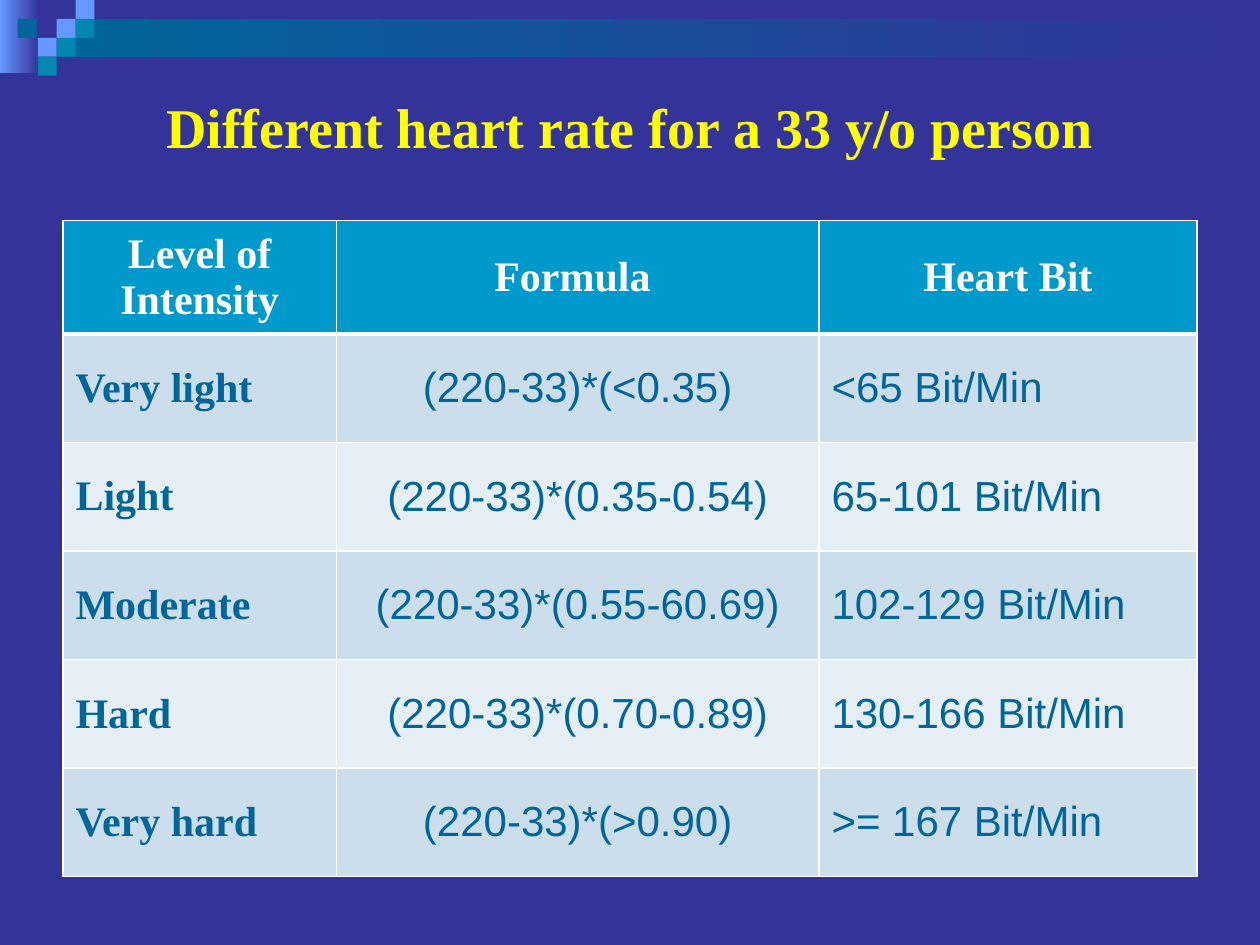
from lxml.etree import SubElement
from pptx import Presentation
from pptx.dml.color import RGBColor
from pptx.enum.shapes import MSO_SHAPE
from pptx.enum.text import MSO_ANCHOR, PP_ALIGN
from pptx.oxml.ns import qn
from pptx.util import Inches, Pt

NAVY = RGBColor(0x33, 0x33, 0x99)
SKY = RGBColor(0x66, 0x99, 0xFF)
DEEP_BLUE = RGBColor(0x00, 0x66, 0x99)
TEAL = RGBColor(0x03, 0x86, 0xAF)
YELLOW = RGBColor(0xFF, 0xFF, 0x00)
WHITE = RGBColor(0xFF, 0xFF, 0xFF)
HEADER_BLUE = RGBColor(0x00, 0x99, 0xCC)
ROW_FILLS = (RGBColor(0xCC, 0xDE, 0xEC), RGBColor(0xE7, 0xEF, 0xF6))

SERIF, SANS = "Times New Roman", "Arial"
COLUMN_WIDTHS = (2.17, 3.83, 3)
HEADERS = ("Level of Intensity", "Formula ", "Heart Bit")
LEVELS = (
    ("Very light ", "(220-33)*(<0.35)", "<65 Bit/Min"),
    ("Light", "(220-33)*(0.35-0.54)", "65-101 Bit/Min"),
    ("Moderate ", "(220-33)*(0.55-60.69)", "102-129 Bit/Min"),
    ("Hard", "(220-33)*(0.70-0.89)", "130-166 Bit/Min"),
    ("Very hard", "(220-33)*(>0.90)", ">= 167 Bit/Min"),
)
SQUARES = (
    (0.45, 0.15, SKY), (0.6, 0, SKY), (0.6, 0.15, TEAL), (0.3, 0.3, SKY),
    (0.14, 0.15, DEEP_BLUE), (0.45, 0.3, TEAL), (0.3, 0.45, TEAL),
)


def write_text(frame, text, *, size=24, font=SERIF, color=WHITE, bold=False,
               align=PP_ALIGN.CENTER):
    """Write one formatted paragraph into a text frame."""
    paragraph = frame.paragraphs[0]
    paragraph.alignment = align
    run = paragraph.add_run()
    run.text = text
    run.font.size = Pt(size)
    run.font.name = font
    run.font.bold = bold
    run.font.color.rgb = color


def add_block(slide, left, top, width, height, color, fade_to=None):
    """Add a borderless rectangle, plain or fading to the right."""
    shape = slide.shapes.add_shape(MSO_SHAPE.RECTANGLE, Inches(left), Inches(top),
                                   Inches(width), Inches(height))
    shape.shadow.inherit = False
    shape.line.fill.background()
    if fade_to is None:
        shape.fill.solid()
        shape.fill.fore_color.rgb = color
        return
    shape.fill.gradient()
    shape.fill.gradient_angle = 0
    for stop, position, stop_color in zip(shape.fill.gradient_stops, (0, 1), (color, fade_to)):
        stop.position = position
        stop.color.rgb = stop_color


def add_banner(slide, left, top, width):
    """Add the fading bars and the mosaic of squares."""
    add_block(slide, left, top, 0.31, 0.58, SKY, NAVY)
    add_block(slide, left + 0.45, top + 0.15, width - 0.45, 0.3, DEEP_BLUE, NAVY)
    for x, y, color in SQUARES:
        add_block(slide, left + x, top + y, 0.15, 0.15, color)


def add_title(slide, left, top, width, height):
    """Add the centred slide title."""
    box = slide.shapes.add_textbox(Inches(left), Inches(top), Inches(width), Inches(height))
    box.text_frame.word_wrap = True
    box.text_frame.vertical_anchor = MSO_ANCHOR.MIDDLE
    write_text(box.text_frame, "Different heart rate for a 33 y/o person",
               size=32, color=YELLOW, bold=True)


def set_borders(cell, **widths):
    """Draw white cell borders with the given widths in points."""
    properties = cell._tc.get_or_add_tcPr()
    for index, (side, width) in enumerate(widths.items()):
        line = properties.makeelement(qn(f"a:{side}"), {"w": str(Pt(width))})
        fill = SubElement(line, qn("a:solidFill"))
        SubElement(fill, qn("a:srgbClr"), val=str(WHITE))
        properties.insert(index, line)


def add_heart_rate_table(slide, left, top, width, height):
    """Add the table of intensity levels, formulas and heart rates."""
    rows = (HEADERS,) + LEVELS
    table = slide.shapes.add_table(len(rows), len(HEADERS), Inches(left), Inches(top),
                                   Inches(width), Inches(height)).table
    for column, column_width in zip(table.columns, COLUMN_WIDTHS):
        column.width = Inches(column_width)
    for row_index, texts in enumerate(rows):
        header = row_index == 0
        for column_index, text in enumerate(texts):
            cell = table.cell(row_index, column_index)
            cell.vertical_anchor = MSO_ANCHOR.MIDDLE
            cell.fill.solid()
            cell.fill.fore_color.rgb = HEADER_BLUE if header else ROW_FILLS[(row_index - 1) % 2]
            label = header or column_index == 0
            centred = header or column_index == 1
            write_text(cell.text_frame, text,
                       font=SERIF if label else SANS, bold=label,
                       color=WHITE if header else DEEP_BLUE,
                       align=PP_ALIGN.CENTER if centred else PP_ALIGN.LEFT)
            set_borders(cell, lnL=1, lnR=1, lnT=3 if row_index == 1 else 1,
                        lnB=3 if header else 1)


def main():
    """Build the presentation and save it."""
    presentation = Presentation()
    presentation.slide_width = Inches(10)
    presentation.slide_height = Inches(7.5)
    slide = presentation.slides.add_slide(presentation.slide_layouts[6])
    slide.background.fill.solid()
    slide.background.fill.fore_color.rgb = NAVY
    add_banner(slide, 0, 0, 10)
    add_title(slide, 0.5, 0.5, 9, 1)
    add_heart_rate_table(slide, 0.5, 1.75, 9, 5.17)
    presentation.save("out.pptx")


if __name__ == "__main__":
    main()
